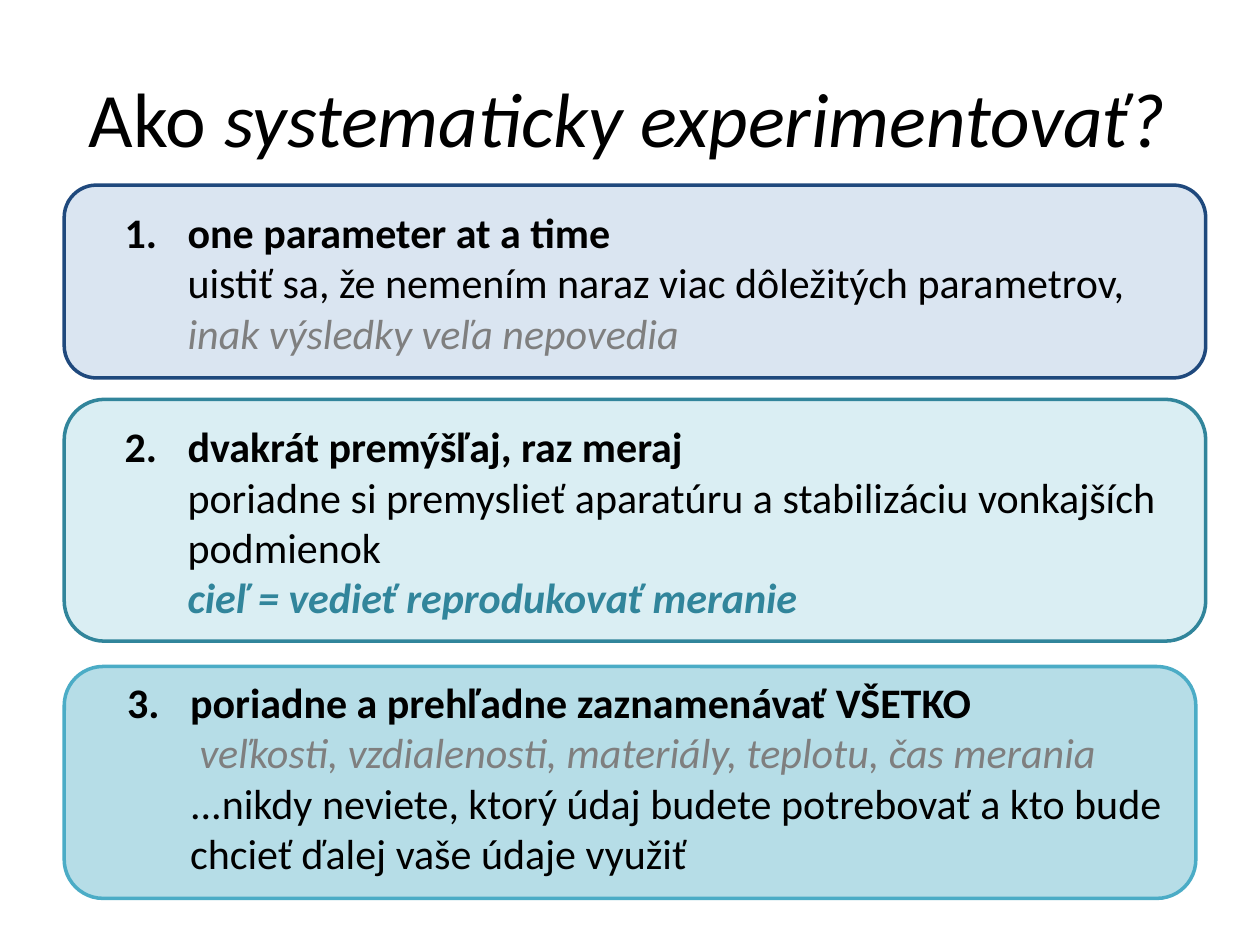
import dataclasses

import pptx
import pptx.dml.color
import pptx.enum.shapes
import pptx.enum.text
import pptx.oxml.xmlchemy
import pptx.util
from lxml import etree

Pt = pptx.util.Pt
RGB = pptx.dml.color.RGBColor.from_string
Align = pptx.enum.text.PP_ALIGN
Anchor = pptx.enum.text.MSO_ANCHOR
Shape = pptx.enum.shapes.MSO_SHAPE
DRAW = "http://schemas.openxmlformats.org/drawingml/2006/main"


@dataclasses.dataclass(frozen=True)
class Theme:
    font: str = "Calibri"
    head: int = 44
    body: int = 24
    ink: str = "000000"
    gray: str = "7F7F7F"
    teal: str = "31859B"
    # fill and line of each card
    cards: tuple = (("DAE5F1", "1F497D"), ("DAEEF3", "31859B"),
                    ("B6DDE7", "4BACC6"))


THEME = Theme()
PLAIN = {}
BOLD = {"bold": True}
SLANT = {"italic": True}
NOTE = {"italic": True, "color": THEME.gray}
GOAL = {"italic": True, "bold": True, "color": THEME.teal}

TITLE = [("Ako ", PLAIN), ("systematicky experimentovať?", SLANT)]

# card top, width, height; text left, top, height; paragraphs of runs
STEPS = [
    ((105.8, 652.3, 110.2), (64.1, 114.5, 94.3), [
        [("one parameter at a time", BOLD)],
        [("uistiť sa, že nemením naraz viac dôležitých parametrov, ", PLAIN),
         ("inak výsledky veľa nepovedia", NOTE)],
    ]),
    ((228.2, 652.3, 138.2), (64.1, 236.9, 123.8), [
        [("dvakrát premýšľaj, raz meraj", BOLD)],
        [("poriadne si premyslieť aparatúru a stabilizáciu vonkajších "
          "podmienok", PLAIN)],
        [("cieľ = vedieť reprodukovať meranie", GOAL)],
    ]),
    ((380.9, 646.6, 132.5), (65.5, 383, 124), [
        [("poriadne a prehľadne zaznamenávať VŠETKO", BOLD)],
        [(" veľkosti, vzdialenosti, materiály, teplotu, čas merania", NOTE)],
        [("...nikdy neviete, ktorý údaj budete potrebovať a kto bude "
          "chcieť ďalej vaše údaje využiť", PLAIN)],
    ]),
]


def add_runs(para, runs, size):
    for text, style in runs:
        run = para.add_run()
        run.text = text
        form = {"name": THEME.font, "size": Pt(size), "bold": False,
                "italic": False, **style}
        color = form.pop("color", THEME.ink)
        for key, value in form.items():
            setattr(run.font, key, value)
        run.font.color.rgb = RGB(color)


def indent(para, number=None):
    """Indent a paragraph; with a number, hang that number in front of it."""
    props = para._p.get_or_add_pPr()
    props.set("marL", str(Pt(36)))
    props.set("indent", str(Pt(-36) if number else 0))
    if number:
        mark = etree.SubElement(props, f"{{{DRAW}}}buAutoNum")
        mark.set("type", "arabicPeriod")
        mark.set("startAt", str(number))


def add_box(slide, place, anchor):
    box = slide.shapes.add_textbox(*map(Pt, place))
    frame = box.text_frame
    form = {"word_wrap": True, "vertical_anchor": anchor,
            "margin_left": Pt(7.2), "margin_right": Pt(7.2),
            "margin_top": Pt(3.6), "margin_bottom": Pt(3.6)}
    for key, value in form.items():
        setattr(frame, key, value)
    return box


def add_title(slide):
    box = add_box(slide, (6, 21.5, 705.6, 90), Anchor.MIDDLE)
    para = box.text_frame.paragraphs[0]
    para.alignment = Align.CENTER
    add_runs(para, TITLE, THEME.head)


def add_card(slide, place, fill, line):
    card = slide.shapes.add_shape(Shape.ROUNDED_RECTANGLE, *map(Pt, place))
    card.shadow.inherit = False
    card.adjustments[0] = 0.167
    card.fill.solid()
    card.fill.fore_color.rgb = RGB(fill)
    card.line.color.rgb = RGB(line)
    card.line.width = Pt(2)


def add_step(slide, number, place, paras):
    frame = add_box(slide, place, Anchor.TOP).text_frame
    for i, runs in enumerate(paras):
        para = frame.add_paragraph() if i else frame.paragraphs[0]
        indent(para, None if i else number)
        add_runs(para, runs, THEME.body)


def main():
    deck = pptx.Presentation()
    deck.slide_width, deck.slide_height = Pt(720), Pt(540)
    slide = deck.slides.add_slide(deck.slide_layouts[6])
    add_title(slide)
    pairs = zip(STEPS, THEME.cards)
    for number, (step, colors) in enumerate(pairs, 1):
        (top, width, height), (left, start, depth), paras = step
        add_card(slide, (36.7, top, width, height), *colors)
        add_step(slide, number, (left, start, 611.3, depth), paras)
    deck.save("out.pptx")


if __name__ == "__main__":
    main()
